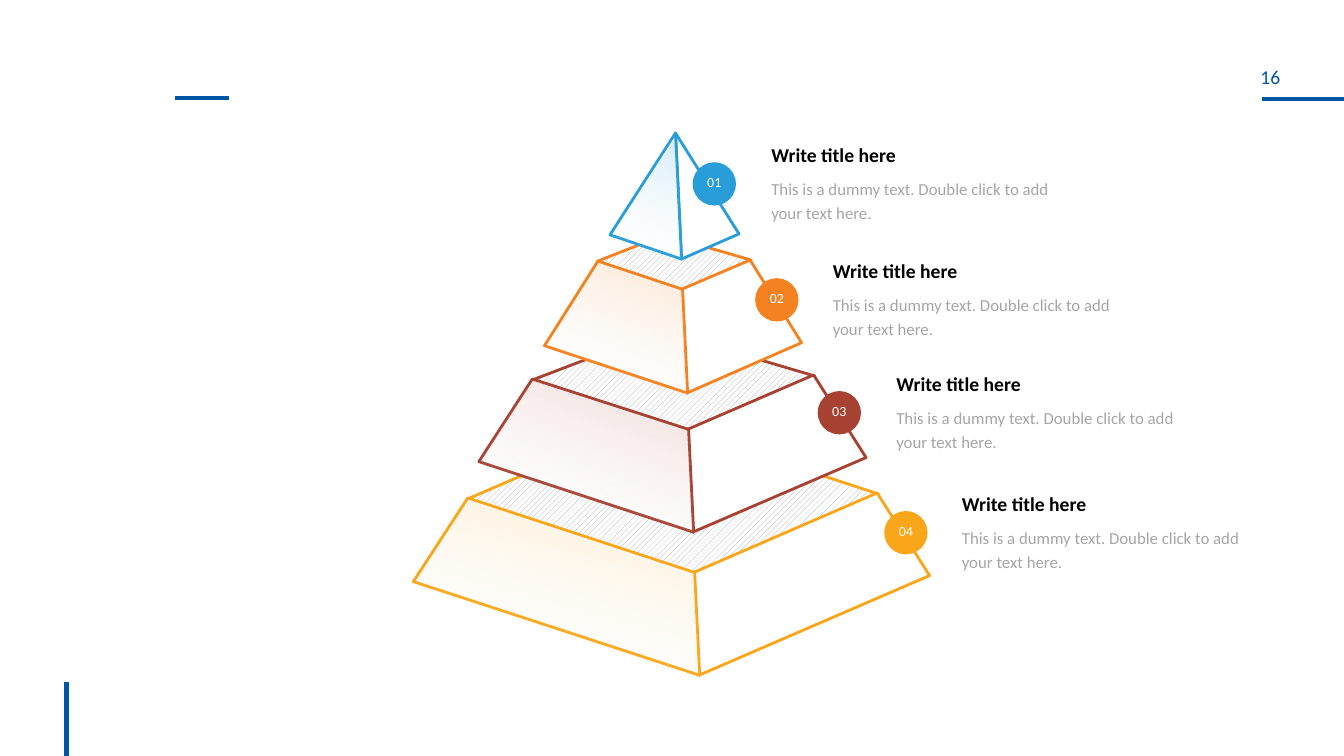
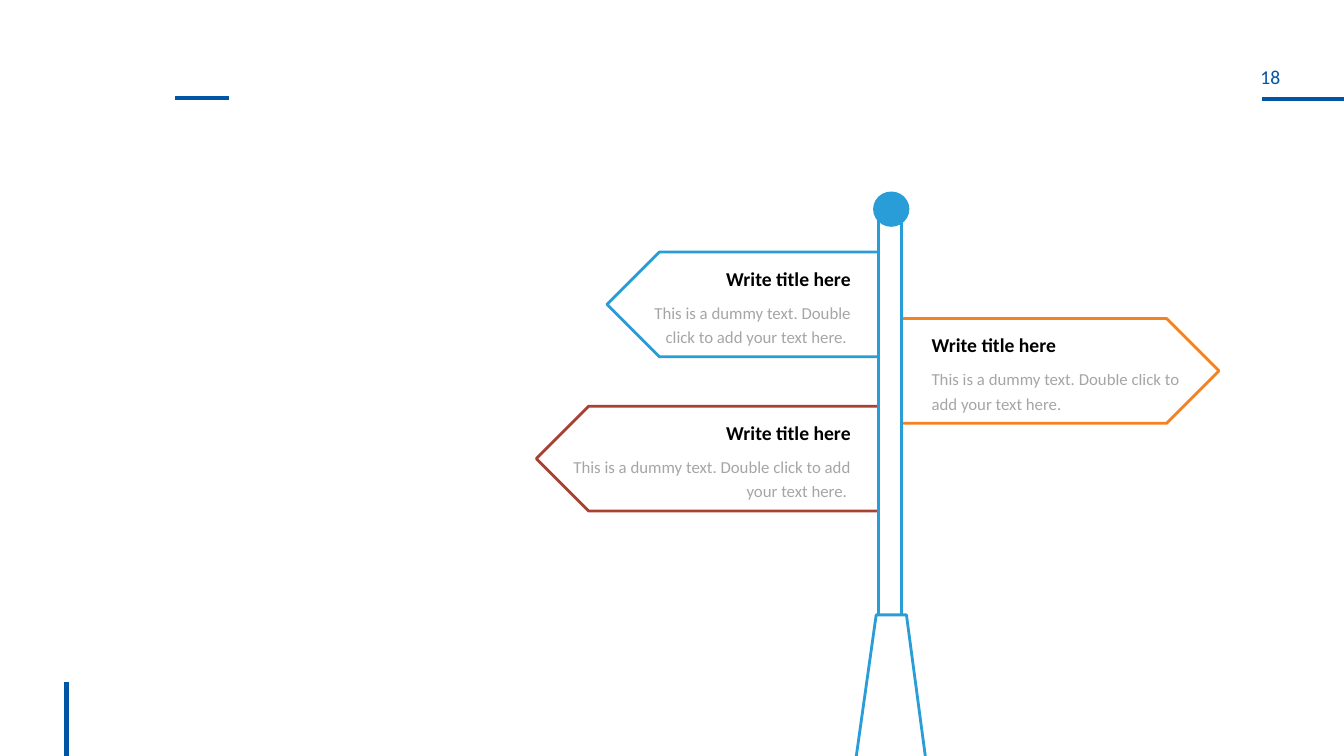
"""Build a pyramid slide and a signpost slide in one shared frame."""
from dataclasses import dataclass

from lxml.etree import SubElement
from pptx import Presentation
from pptx.dml.color import RGBColor
from pptx.enum.dml import MSO_PATTERN
from pptx.enum.shapes import MSO_CONNECTOR, MSO_SHAPE as Preset
from pptx.enum.text import MSO_ANCHOR as Anchor, PP_ALIGN as Align
from pptx.oxml.ns import qn
from pptx.shapes.autoshape import Shape
from pptx.slide import Slide
from pptx.text.text import TextFrame, _Paragraph as Paragraph, _Run as Run
from pptx.util import Pt

PX = 9144
SLIDE_WIDTH, SLIDE_HEIGHT = 1333, 750
FONT = "Calibri"
NAVY = RGBColor(0x00, 0x55, 0xA5)
SKY = RGBColor(0x28, 0x9D, 0xD8)
ORANGE = RGBColor(0xF5, 0x82, 0x20)
BRICK = RGBColor(0xA7, 0x42, 0x33)
AMBER = RGBColor(0xFA, 0xA6, 0x1A)
HATCH = RGBColor(0xA6, 0xA6, 0xA6)
GREY = RGBColor(0x80, 0x80, 0x80)
BLACK = RGBColor(0x00, 0x00, 0x00)
WHITE = RGBColor(0xFF, 0xFF, 0xFF)
TITLE = "Write title here"
BODY = "This is a dummy text. Double click to add your text here."
BADGE_SIZE = 43
CAPTION_SIZE = (296, 95)

Point = tuple[int, int]
Bounds = tuple[int, int, int, int]


@dataclass(frozen=True)
class Tier:
    label: str
    color: RGBColor
    top: list[Point]
    right: list[Point]
    left: list[Point]
    badge: Point
    caption: Point
    glaze_drop: int
    glaze_angle: int = 110


@dataclass(frozen=True)
class Sign:
    color: RGBColor
    bounds: Bounds
    points_left: bool


FRAME_RULES: list[tuple[Point, Point]] = [
    ((1252, 98), (SLIDE_WIDTH, 98)),
    ((66, 677), (66, SLIDE_HEIGHT)),
    ((174, 97), (227, 97)),
]
TIERS = [
    Tier("01", SKY, [],
         [(670, 132), (676, 257), (733, 232)],
         [(676, 257), (605, 233), (670, 132)],
         (687, 161), (765, 132), 5),
    Tier("02", ORANGE,
         [(593, 259), (659, 233), (745, 258), (678, 298)],
         [(744, 258), (676, 287), (681, 390), (795, 340)],
         [(682, 390), (677, 287), (593, 259), (540, 343)],
         (749, 276), (826, 247), 2),
    Tier("03", BRICK,
         [(528, 377), (656, 328), (808, 373), (683, 427)],
         [(807, 372), (682, 426), (687, 528), (859, 454)],
         [(688, 528), (683, 426), (528, 376), (475, 458)],
         (811, 388), (889, 359), 1),
    Tier("04", AMBER,
         [(464, 495), (646, 416), (871, 490), (690, 585)],
         [(870, 489), (688, 568), (693, 670), (922, 571)],
         [(689, 568), (694, 670), (410, 577), (464, 494)],
         (877, 507), (954, 478), 3, 105),
]
SIGNS = [
    Sign(SKY, (602, 250, 273, 104), True),
    Sign(BRICK, (532, 403, 343, 104), True),
    Sign(ORANGE, (893, 316, 316, 104), False),
]
POST: Bounds = (871, 214, 23, 406)
POST_BASE = [(899, 610), (918, 752), (849, 752), (869, 610)]
POST_KNOB: Bounds = (866, 190, 36, 35)


def px(value: int) -> int:
    return value * PX


def set_alpha(color_parent, percent: int) -> None:
    color = next(color_parent.iter(qn("a:srgbClr")))
    SubElement(color, qn("a:alpha")).set("val", str(percent * 1000))


def set_outline(shape: Shape, color: RGBColor) -> None:
    shape.line.color.rgb = color
    shape.line.width = Pt(2)
    SubElement(shape.line._get_or_add_ln(), qn("a:round"))


def set_solid(shape: Shape, color: RGBColor) -> None:
    shape.fill.solid()
    shape.fill.fore_color.rgb = color


def set_insets(frame: TextFrame, left: int, top: int, right: int, bottom: int) -> None:
    frame.margin_left, frame.margin_top = px(left), px(top)
    frame.margin_right, frame.margin_bottom = px(right), px(bottom)


def add_run(para: Paragraph, text: str, size: int, color: RGBColor, bold: bool = False) -> Run:
    span = para.add_run()
    span.text = text
    span.font.name = FONT
    span.font.size = Pt(size)
    span.font.bold = bold
    span.font.color.rgb = color
    return span


def write_caption(frame: TextFrame, body: str, align: Align) -> None:
    frame.word_wrap = True
    heading, detail = frame.paragraphs[0], frame.add_paragraph()
    for para in (heading, detail):
        para.alignment = align
        para.line_spacing = 1.2
    detail.space_before = Pt(6)
    add_run(heading, TITLE, 14, BLACK, bold=True)
    span = add_run(detail, body, 12, GREY)
    set_alpha(span._r, 70)


def add_preset(page: Slide, kind: Preset, bounds: Bounds, fill: RGBColor,
               line: RGBColor | None = None) -> Shape:
    shape = page.shapes.add_shape(kind, *map(px, bounds))
    shape.shadow.inherit = False
    set_solid(shape, fill)
    if line is None:
        shape.line.fill.background()
    else:
        set_outline(shape, line)
    return shape


def add_outline(page: Slide, points: list[Point]) -> Shape:
    builder = page.shapes.build_freeform(*points[0], scale=PX)
    builder.add_line_segments(points[1:], close=True)
    shape = builder.convert_to_shape()
    shape.shadow.inherit = False
    return shape


def add_face(page: Slide, points: list[Point], color: RGBColor, hatched: bool = False) -> None:
    face = add_outline(page, points)
    if hatched:
        face.fill.patterned()
        face.fill.pattern = MSO_PATTERN.WIDE_UPWARD_DIAGONAL
        face.fill.fore_color.rgb = HATCH
        face.fill.back_color.rgb = WHITE
    else:
        set_solid(face, WHITE)
    set_outline(face, color)


def add_glaze(page: Slide, tier: Tier) -> None:
    glaze = add_outline(page, [(x, y + tier.glaze_drop) for x, y in tier.left])
    glaze.line.fill.background()
    glaze.fill.gradient()
    glaze.fill.gradient_angle = 360 - tier.glaze_angle
    stops = zip(glaze.fill.gradient_stops, (tier.color, WHITE), (0, 0.99), (20, 0))
    for stop, color, position, alpha in stops:
        stop.color.rgb = color
        stop.position = position
        set_alpha(stop._gs, alpha)


def add_badge(page: Slide, tier: Tier) -> None:
    badge = add_preset(page, Preset.OVAL, (*tier.badge, BADGE_SIZE, BADGE_SIZE), tier.color)
    frame = badge.text_frame
    set_insets(frame, 0, 0, 0, 0)
    frame.vertical_anchor = Anchor.MIDDLE
    para = frame.paragraphs[0]
    para.alignment = Align.CENTER
    para.line_spacing = 0.8
    add_run(para, tier.label, 10, WHITE)


def add_tier_caption(page: Slide, tier: Tier) -> None:
    box = page.shapes.add_textbox(*map(px, (*tier.caption, *CAPTION_SIZE)))
    set_insets(box.text_frame, 0, 5, 0, 5)
    write_caption(box.text_frame, BODY, Align.LEFT)


def add_sign(page: Slide, sign: Sign) -> None:
    plate = add_preset(page, Preset.PENTAGON, sign.bounds, WHITE, sign.color)
    frame = plate.text_frame
    frame.vertical_anchor = Anchor.MIDDLE
    if sign.points_left:
        plate._element.spPr.xfrm.set("flipH", "1")
        set_insets(frame, 8, 5, 31, 5)
        write_caption(frame, f"{BODY} ", Align.RIGHT)
    else:
        set_insets(frame, 31, 5, 10, 5)
        write_caption(frame, BODY, Align.LEFT)


def add_page(deck, number: int) -> Slide:
    page = deck.slides.add_slide(deck.slide_layouts[6])
    for start, end in FRAME_RULES:
        rule = page.shapes.add_connector(MSO_CONNECTOR.STRAIGHT, *map(px, (*start, *end)))
        rule.line.color.rgb = NAVY
        rule.line.width = Pt(3)
        SubElement(rule._element.spPr, qn("a:effectLst"))
    box = page.shapes.add_textbox(*map(px, (1200, 64, 120, 33)))
    set_insets(box.text_frame, 0, 0, 0, 0)
    para = box.text_frame.paragraphs[0]
    para.alignment = Align.CENTER
    add_run(para, str(number), 14, NAVY)
    return page


def build_pyramid(deck) -> None:
    page = add_page(deck, 16)
    for tier in reversed(TIERS):
        if tier.top:
            add_face(page, tier.top, tier.color, hatched=True)
        add_face(page, tier.right, tier.color)
        add_face(page, tier.left, tier.color)
    for tier in TIERS:
        add_badge(page, tier)
        add_tier_caption(page, tier)
    for tier in TIERS:
        add_glaze(page, tier)


def build_signpost(deck) -> None:
    page = add_page(deck, 18)
    for sign in SIGNS:
        add_sign(page, sign)
    add_preset(page, Preset.RECTANGLE, POST, WHITE, SKY)
    add_face(page, POST_BASE, SKY)
    add_preset(page, Preset.OVAL, POST_KNOB, SKY)


def main() -> None:
    deck = Presentation()
    deck.slide_width, deck.slide_height = px(SLIDE_WIDTH), px(SLIDE_HEIGHT)
    build_pyramid(deck)
    build_signpost(deck)
    deck.save("out.pptx")


if __name__ == "__main__":
    main()
